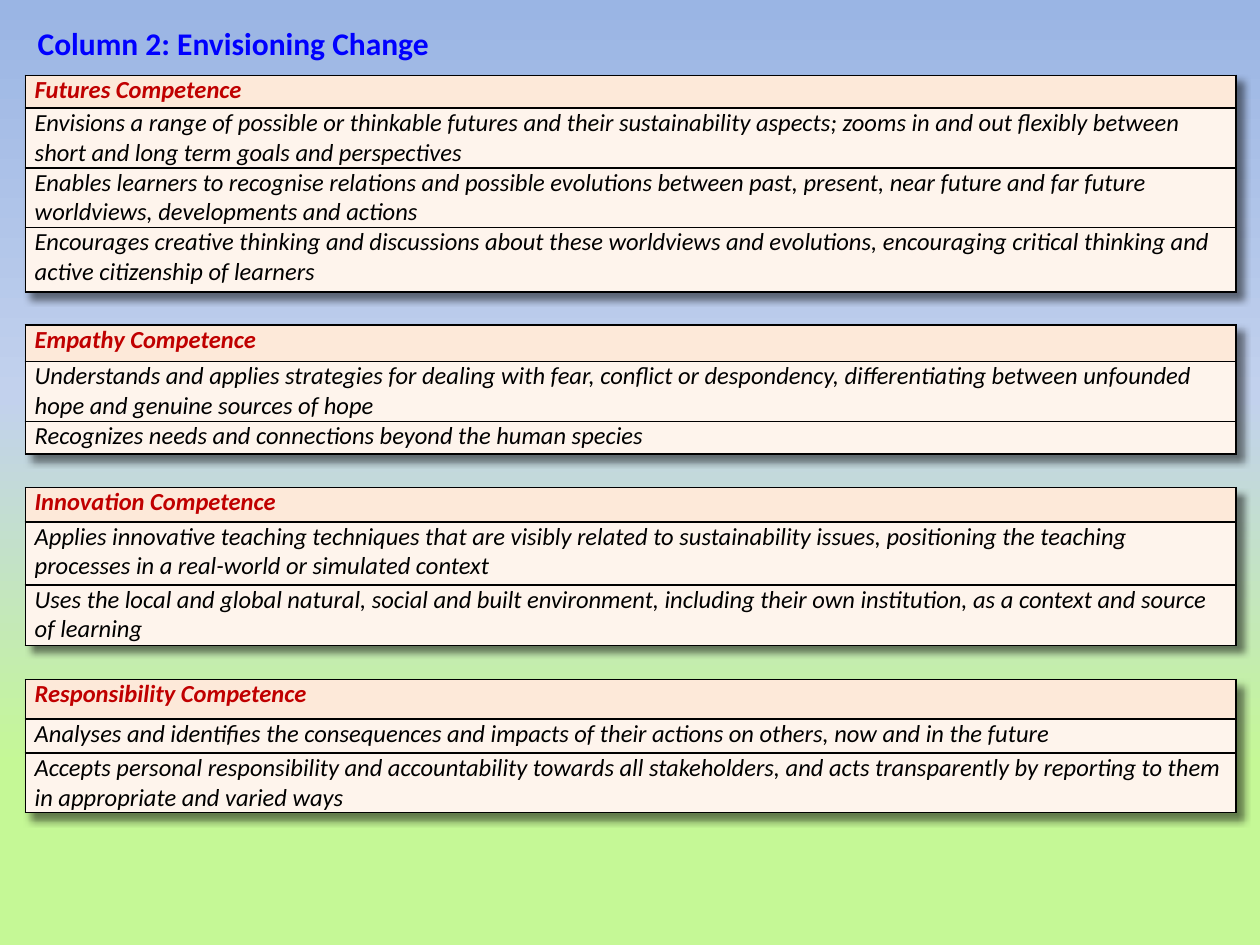
from copy import deepcopy

from lxml import etree
from pptx import Presentation
from pptx.dml.color import RGBColor
from pptx.enum.text import MSO_ANCHOR, MSO_AUTO_SIZE
from pptx.oxml.ns import qn
from pptx.util import Cm, Pt

TOP = MSO_ANCHOR.TOP
FIT_SHAPE = MSO_AUTO_SIZE.SHAPE_TO_FIT_TEXT

COLORS = {
    "sky": "9AB5E4",
    "haze": "C2D1ED",
    "grass": "C5F896",
    "title": "0000FF",
    "heading": "C00000",
    "text": "000000",
    "border": "000000",
    "head_fill": "FDE9D9",
    "body_fill": "FEF4EC",
}

LEFT, WIDTH = 0.51, 24.41
FIRST_TOP, GAP = 1.52, 0.69

COMPETENCES = [
    ("Futures Competence", [0.66, 1.19, 1.19, 1.3], [
        "Envisions a range of possible or thinkable futures and their sustainability aspects; "
        "zooms in and out flexibly between short and long term goals and perspectives",
        "Enables learners to recognise relations and possible evolutions between past, present, "
        "near future and far future worldviews, developments and actions",
        "Encourages creative thinking and discussions about these worldviews and evolutions, "
        "encouraging critical thinking and active citizenship of learners",
    ]),
    ("Empathy Competence", [0.74, 1.19, 0.66], [
        "Understands and applies strategies for dealing with fear, conflict or despondency, "
        "differentiating between unfounded hope and genuine sources of hope",
        "Recognizes needs and connections beyond the human species",
    ]),
    ("Innovation Competence", [0.69, 1.27, 1.22], [
        "Applies innovative teaching techniques that are visibly related to sustainability issues, "
        "positioning the teaching processes in a real-world or simulated context",
        "Uses the local and global natural, social and built environment, including their own "
        "institution, as a context and source of learning",
    ]),
    ("Responsibility Competence", [0.79, 0.69, 1.19], [
        "Analyses and identifies the consequences and impacts of their actions on others, "
        "now and in the future",
        "Accepts personal responsibility and accountability towards all stakeholders, and acts "
        "transparently by reporting to them in appropriate and varied ways",
    ]),
]


class Deck:
    font = "Calibri"

    def __init__(self, slide):
        self.s = slide

    def color(self, name):
        return RGBColor.from_string(COLORS[name])

    def background(self, stops):
        fill = self.s.background.fill
        fill.gradient()
        fill.gradient_angle = 270
        gs_lst = self.s.element.find(".//" + qn("a:gsLst"))
        while len(gs_lst) < len(stops):
            gs_lst.append(deepcopy(gs_lst[0]))
        for stop, (position, name) in zip(fill.gradient_stops, stops):
            stop.position = position
            stop.color.rgb = self.color(name)

    def run(self, p, text, size, color, bold=False, italic=False):
        r = p.add_run()
        r.text = text
        r.font.name = self.font
        r.font.size = Pt(size)
        r.font.bold = bold
        r.font.italic = italic
        r.font.color.rgb = self.color(color)

    def title(self, text, left, top, width, height):
        sp = self.s.shapes.add_textbox(Cm(left), Cm(top), Cm(width), Cm(height))
        tf = sp.text_frame
        tf.word_wrap = False
        tf.auto_size = FIT_SHAPE
        p = tf.paragraphs[0]
        p.space_before = Pt(6)
        self.run(p, text, 18, "title", bold=True)

    def borders(self, cell):
        tc_pr = cell._tc.get_or_add_tcPr()
        for i, side in enumerate(("a:lnL", "a:lnR", "a:lnT", "a:lnB")):
            ln = etree.Element(qn(side), w=str(Pt(1)))
            fill = etree.SubElement(ln, qn("a:solidFill"))
            etree.SubElement(fill, qn("a:srgbClr"), val=COLORS["border"])
            tc_pr.insert(i, ln)

    def shadow(self, table):
        effects = etree.SubElement(table._tbl.tblPr, qn("a:effectLst"))
        table._tbl.tblPr.insert(0, effects)
        outer = etree.SubElement(effects, qn("a:outerShdw"), blurRad=str(Pt(4)),
                                 dist=str(Pt(5)), dir="2700000", algn="tl", rotWithShape="0")
        color = etree.SubElement(outer, qn("a:srgbClr"), val=COLORS["border"])
        etree.SubElement(color, qn("a:alpha"), val="50000")

    def table(self, heading, items, heights, left, top, width):
        frame = self.s.shapes.add_table(len(heights), 1, Cm(left), Cm(top),
                                        Cm(width), Cm(sum(heights)))
        table = frame.table
        table.first_row = table.horz_banding = False
        self.shadow(table)
        for i, (text, height) in enumerate(zip([heading, *items], heights)):
            is_head = i == 0
            table.rows[i].height = Cm(height)
            cell = table.cell(i, 0)
            cell.margin_left = cell.margin_right = Cm(0.19)
            cell.margin_top = cell.margin_bottom = 0
            cell.vertical_anchor = TOP
            cell.fill.solid()
            cell.fill.fore_color.rgb = self.color("head_fill" if is_head else "body_fill")
            self.borders(cell)
            self.run(cell.text_frame.paragraphs[0], text, 14,
                     "heading" if is_head else "text", bold=is_head, italic=True)


def main():
    prs = Presentation()
    prs.slide_width, prs.slide_height = Cm(25.4), Cm(19.05)
    deck = Deck(prs.slides.add_slide(prs.slide_layouts[6]))
    deck.background([(0, "sky"), (0.42, "haze"), (0.81, "grass")])
    top = FIRST_TOP
    for heading, heights, items in COMPETENCES:
        deck.table(heading, items, heights, LEFT, top, WIDTH)
        top += sum(heights) + GAP
    deck.title("Column 2: Envisioning Change", LEFT, 0.36, 8.46, 1.02)
    prs.save("out.pptx")


if __name__ == "__main__":
    main()
